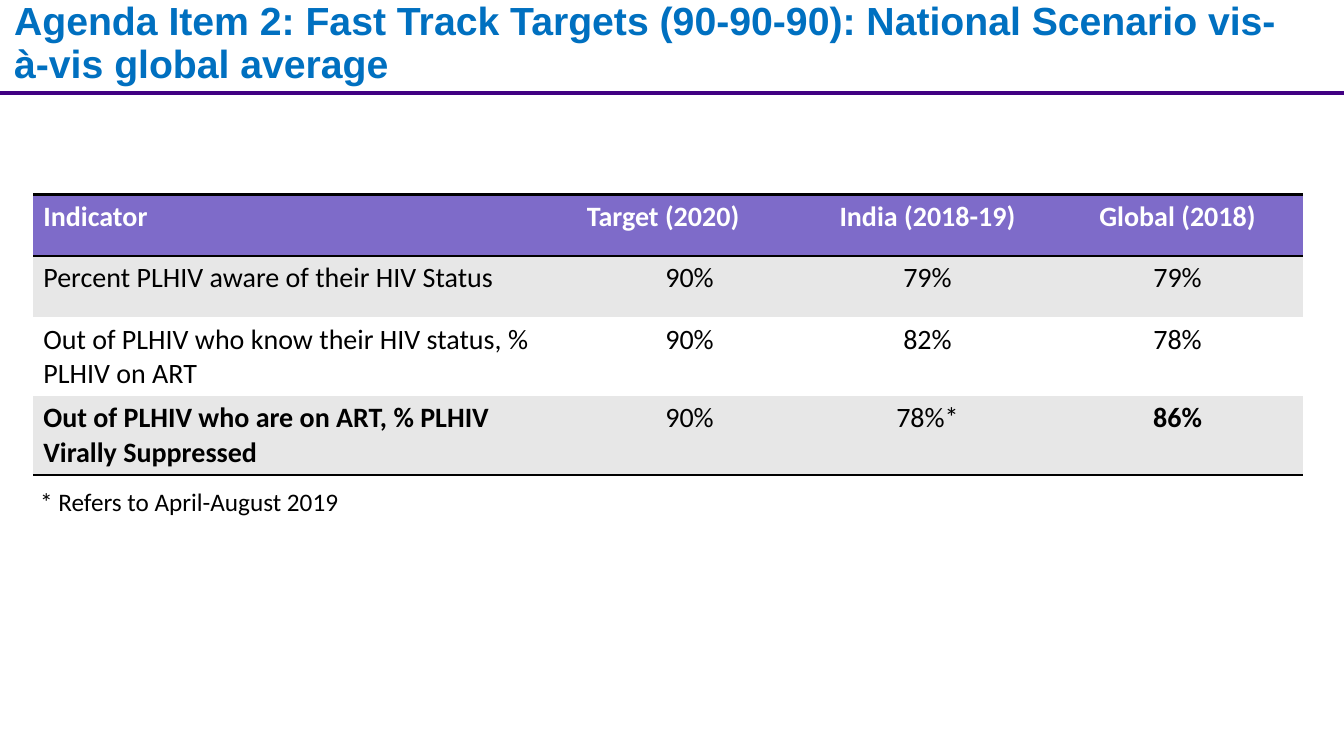
from dataclasses import dataclass

from lxml import etree
from pptx import Presentation
from pptx.dml.color import RGBColor
from pptx.enum.shapes import MSO_CONNECTOR
from pptx.enum.text import MSO_ANCHOR, MSO_AUTO_SIZE, PP_ALIGN
from pptx.oxml.ns import qn
from pptx.util import Inches, Pt

STRAIGHT = MSO_CONNECTOR.STRAIGHT
MIDDLE = MSO_ANCHOR.MIDDLE
LEFT, CENTER = PP_ALIGN.LEFT, PP_ALIGN.CENTER
NO_AUTOFIT, GROW = MSO_AUTO_SIZE.NONE, MSO_AUTO_SIZE.SHAPE_TO_FIT_TEXT
TITLE_ONLY = 5
PLAIN_TABLE_STYLE = "{2D5ABB26-0587-4C30-8999-92F81FD0307C}"


@dataclass(frozen=True)
class Theme:
    title_font: str = "Arial"
    body_font: str = "Calibri"
    title: str = "0070C0"
    rule: str = "410082"
    header: str = "7E6BC9"
    band: str = "E7E7E7"
    white: str = "FFFFFF"
    text: str = "000000"
    title_size: int = 28
    table_size: int = 20
    note_size: int = 18
    rule_width: int = 3
    border_width: int = 2


THEME = Theme()
TITLE = ("Agenda Item 2: Fast Track Targets (90-90-90): "
         "National Scenario vis-à-vis global average")
TARGET_ROWS = [
    ["Indicator", "Target (2020)", "India (2018-19)", "Global (2018)"],
    ["Percent PLHIV aware of their HIV Status", "90%", "79%", "79%"],
    ["Out of PLHIV who know their HIV status, % PLHIV on ART", "90%", "82%", "78%"],
    ["Out of PLHIV who are on ART, % PLHIV Virally Suppressed", "90%", "78%*", "86%"],
]
COLUMN_WIDTHS = [5.39, 2.24, 2.48, 2.48]
ROW_HEIGHTS = [0.61, 0.61, 0.61, 0.7]
LAST_ROW = len(TARGET_ROWS) - 1
BOLD_CELLS = {(LAST_ROW, 0), (LAST_ROW, 3)}
LEFT_HEADERS = {(0, 1)}


def write_text(frame, text, font, size, color, bold=False, align=LEFT):
    frame.text = text
    para = frame.paragraphs[0]
    para.alignment = align
    span = para.runs[0].font
    span.name, span.size, span.bold = font, Pt(size), bold
    span.color.rgb = RGBColor.from_string(color)
    return para


def set_title(page, text):
    title = page.shapes.title
    title.left, title.top = Inches(0.04), Inches(0.15)
    title.width, title.height = Inches(12.89), Inches(0.58)
    frame = title.text_frame
    frame.word_wrap = True
    frame.auto_size = NO_AUTOFIT
    frame.vertical_anchor = MIDDLE
    para = write_text(frame, text, THEME.title_font, THEME.title_size, THEME.title, True)
    para.line_spacing = 0.9
    para.space_before = Pt(0)


def add_rule(page, top, width):
    rule = page.shapes.add_connector(STRAIGHT, 0, top, width, top)
    rule.line.color.rgb = RGBColor.from_string(THEME.rule)
    rule.line.width = Pt(THEME.rule_width)
    etree.SubElement(rule._element.spPr, qn("a:effectLst"))


def add_border(cell, side):
    """Draw one cell edge; side is T or B. Call it before the fill is set."""
    properties = cell._tc.get_or_add_tcPr()
    line = etree.SubElement(properties, qn(f"a:ln{side}"), w=str(Pt(THEME.border_width)))
    fill = etree.SubElement(line, qn("a:solidFill"))
    etree.SubElement(fill, qn("a:srgbClr"), val=THEME.text)


def format_cell(cell, text, row, column):
    header = row == 0
    if header:
        add_border(cell, "T")
    if header or row == LAST_ROW:
        add_border(cell, "B")
    band = THEME.band if row % 2 else THEME.white
    cell.fill.solid()
    cell.fill.fore_color.rgb = RGBColor.from_string(THEME.header if header else band)
    left = column == 0 or (row, column) in LEFT_HEADERS
    write_text(cell.text_frame, text, THEME.body_font, THEME.table_size,
               THEME.white if header else THEME.text,
               header or (row, column) in BOLD_CELLS, LEFT if left else CENTER)


def add_targets_table(page):
    table = page.shapes.add_table(
        len(TARGET_ROWS), len(COLUMN_WIDTHS), Inches(0.33), Inches(1.93),
        Inches(sum(COLUMN_WIDTHS)), Inches(sum(ROW_HEIGHTS))).table
    table._tbl.tblPr.find(qn("a:tableStyleId")).text = PLAIN_TABLE_STYLE
    table.horz_banding = False
    for column, width in zip(table.columns, COLUMN_WIDTHS):
        column.width = Inches(width)
    for row, height in zip(table.rows, ROW_HEIGHTS):
        row.height = Inches(height)
    for row, texts in enumerate(TARGET_ROWS):
        for column, text in enumerate(texts):
            format_cell(table.cell(row, column), text, row, column)


def add_note(page, text):
    box = page.shapes.add_textbox(Inches(0.3), Inches(4.78), Inches(12.11), Inches(0.4))
    frame = box.text_frame
    frame.word_wrap = True
    frame.auto_size = GROW
    write_text(frame, text, THEME.body_font, THEME.note_size, THEME.text)


def main():
    deck = Presentation()
    deck.slide_width, deck.slide_height = Inches(13.33), Inches(7.5)
    page = deck.slides.add_slide(deck.slide_layouts[TITLE_ONLY])
    add_rule(page, Inches(0.92), deck.slide_width)
    set_title(page, TITLE)
    add_targets_table(page)
    add_note(page, "* Refers to April-August 2019")
    deck.save("out.pptx")


if __name__ == "__main__":
    main()
